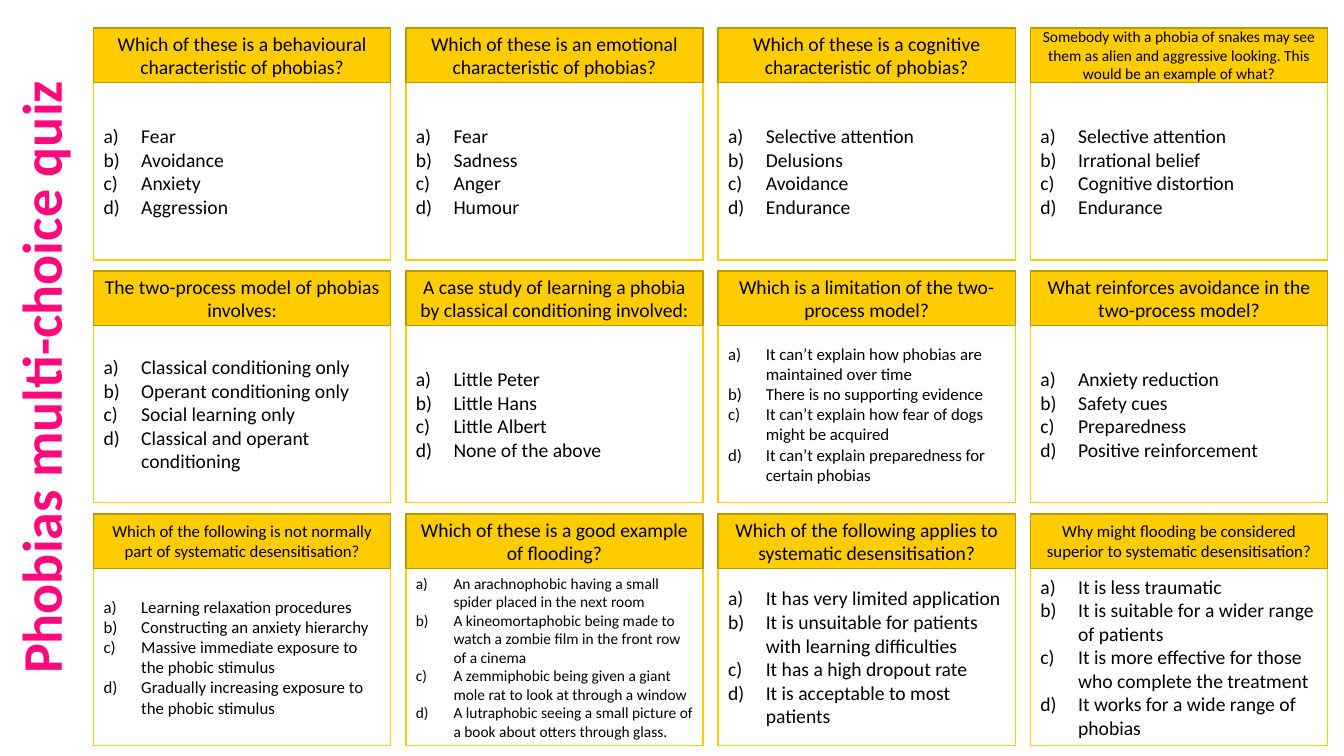
from lxml import etree
from pptx import Presentation
from pptx.dml.color import RGBColor
from pptx.enum import shapes, text
from pptx.oxml import ns
from pptx.util import Cm, Pt

TITLE = "Phobias multi-choice quiz"
QUIZ = [
    [
        ("Which of these is a behavioural characteristic of phobias?", 14,
         ["Fear", "Avoidance", "Anxiety", "Aggression"], 14),
        ("Which of these is an emotional characteristic of phobias?", 14,
         ["Fear", "Sadness", "Anger", "Humour"], 14),
        ("Which of these is a cognitive characteristic of phobias?", 14,
         ["Selective attention", "Delusions", "Avoidance", "Endurance"], 14),
        ("Somebody with a phobia of snakes may see them as alien and aggressive looking. "
         "This would be an example of what?", 11,
         ["Selective attention", "Irrational belief", "Cognitive distortion", "Endurance"], 14),
    ],
    [
        ("The two-process model of phobias involves:", 14,
         ["Classical conditioning only", "Operant conditioning only",
          "Social learning only", "Classical and operant conditioning"], 14),
        ("A case study of learning a phobia by classical conditioning involved:", 14,
         ["Little Peter", "Little Hans", "Little Albert", "None of the above"], 14),
        ("Which is a limitation of the two-process model?", 14,
         ["It can’t explain how phobias are maintained over time",
          "There is no supporting evidence",
          "It can’t explain how fear of dogs might be acquired",
          "It can’t explain preparedness for certain phobias"], 12),
        ("What reinforces avoidance in the two-process model?", 14,
         ["Anxiety reduction", "Safety cues", "Preparedness", "Positive reinforcement"], 14),
    ],
    [
        ("Which of the following is not normally part of systematic desensitisation?", 12,
         ["Learning relaxation procedures", "Constructing an anxiety hierarchy",
          "Massive immediate exposure to the phobic stimulus",
          "Gradually increasing exposure to the phobic stimulus"], 12),
        ("Which of these is a good example of flooding?", 14,
         ["An arachnophobic having a small spider placed in the next room",
          "A kineomortaphobic being made to watch a zombie film in the front row of a cinema",
          "A zemmiphobic being given a giant mole rat to look at through a window",
          "A lutraphobic seeing a small picture of a book about otters through glass."], 11),
        ("Which of the following applies to systematic desensitisation?", 14,
         ["It has very limited application",
          "It is unsuitable for patients with learning difficulties",
          "It has a high dropout rate", "It is acceptable to most patients"], 14),
        ("Why might flooding be considered superior to systematic desensitisation?", 12,
         ["It is less traumatic", "It is suitable for a wider range of patients",
          "It is more effective for those who complete the treatment",
          "It works for a wide range of phobias"], 14),
    ],
]

FONT = "Calibri"
BLACK = RGBColor(0x00, 0x00, 0x00)
WHITE = RGBColor(0xFF, 0xFF, 0xFF)
YELLOW = RGBColor(0xFF, 0xCC, 0x00)
DARK_YELLOW = RGBColor(0xBD, 0x97, 0x00)
PINK = RGBColor(0xFF, 0x09, 0x7C)

LEFT, TOP = Cm(2.36), Cm(0.71)
COLUMN_STEP, ROW_STEP = Cm(7.87), Cm(6.12)
CARD_WIDTH = Cm(7.49)
QUESTION_HEIGHT, ANSWERS_HEIGHT = Cm(1.37), Cm(4.47)
INDENT = Cm(0.95)


def style(para, size, color, bold=False):
    para.font.name = FONT
    para.font.size = Pt(size)
    para.font.bold = bold
    para.font.color.rgb = color


def add_letter(para):
    props = para._p.get_or_add_pPr()
    props.set("marL", str(INDENT))
    props.set("indent", str(-INDENT))
    number = etree.Element(ns.qn("a:buAutoNum"), type="alphaLcParenR")
    props.insert(0, number)


def add_box(page, x, y, height, fill, line, lines, size, lettered):
    box = page.shapes.add_shape(shapes.MSO_SHAPE.RECTANGLE, x, y, CARD_WIDTH, height)
    box.shadow.inherit = False
    box.fill.solid()
    box.fill.fore_color.rgb = fill
    box.line.color.rgb = line
    box.line.width = Pt(1)
    frame = box.text_frame
    frame.word_wrap = True
    frame.vertical_anchor = text.MSO_ANCHOR.MIDDLE
    frame.text = "\n".join(lines)
    for para in frame.paragraphs:
        para.alignment = text.PP_ALIGN.LEFT if lettered else text.PP_ALIGN.CENTER
        style(para, size, BLACK)
        if lettered:
            add_letter(para)


def add_title(page):
    title = page.shapes.title
    title.left, title.top = Cm(-8.51), Cm(8.53)
    title.width, title.height = Cm(19.02), Cm(1.96)
    title.rotation = 270
    frame = title.text_frame
    frame.text = TITLE
    frame.auto_size = text.MSO_AUTO_SIZE.NONE
    frame.vertical_anchor = text.MSO_ANCHOR.TOP
    frame.paragraphs[0].alignment = text.PP_ALIGN.CENTER
    style(frame.paragraphs[0], 40, PINK, bold=True)


def main():
    deck = Presentation()
    deck.slide_width, deck.slide_height = Cm(33.87), Cm(19.05)
    page = deck.slides.add_slide(deck.slide_layouts.get_by_name("Title Only"))
    add_title(page)
    for row, cards in enumerate(QUIZ):
        for column, (question, question_size, answers, answer_size) in enumerate(cards):
            x = LEFT + column * COLUMN_STEP
            y = TOP + row * ROW_STEP
            add_box(page, x, y + QUESTION_HEIGHT, ANSWERS_HEIGHT,
                    WHITE, YELLOW, answers, answer_size, True)
            add_box(page, x, y, QUESTION_HEIGHT,
                    YELLOW, DARK_YELLOW, [question], question_size, False)
    deck.save("out.pptx")


if __name__ == "__main__":
    main()
